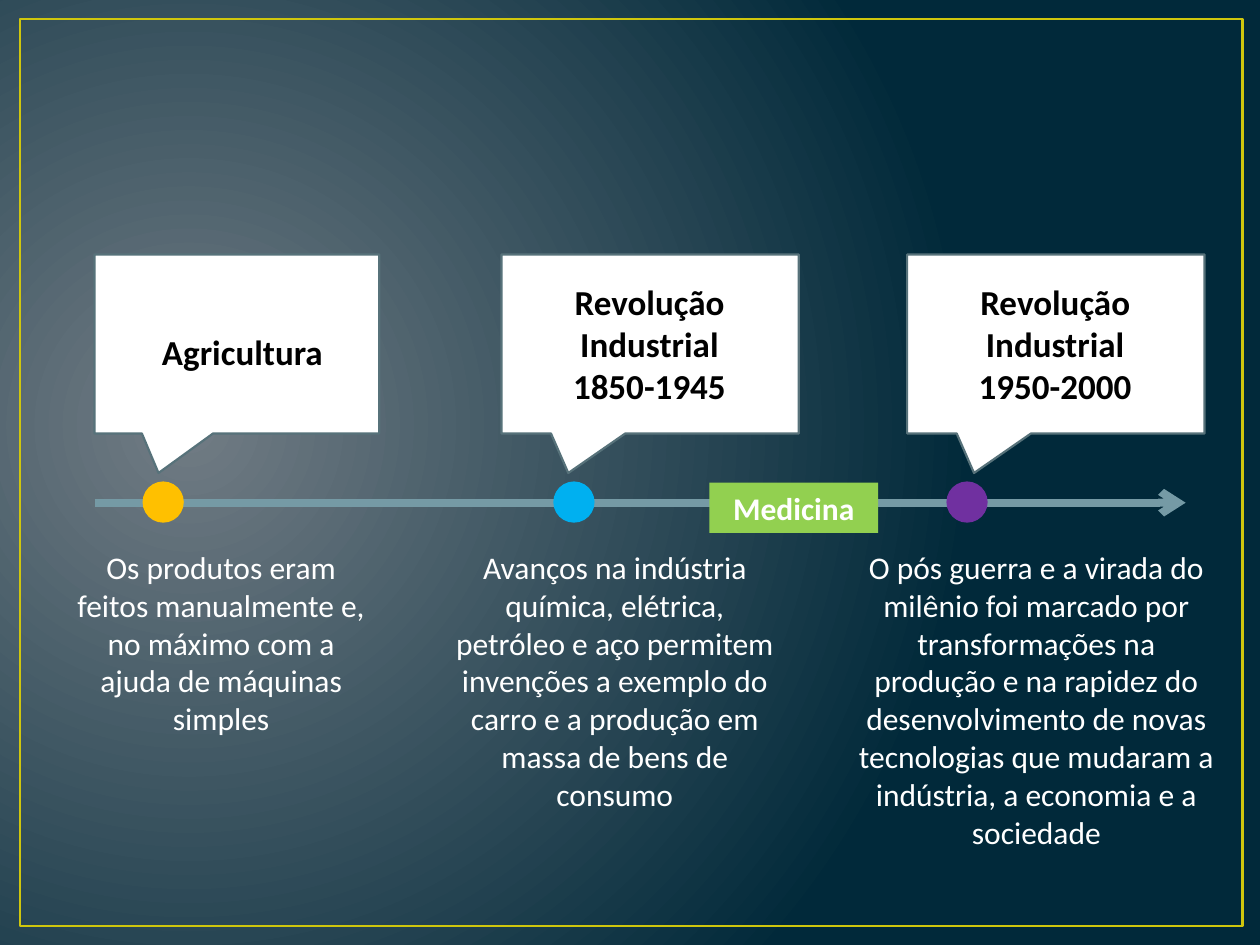
from lxml.etree import SubElement as Sub
from pptx import Presentation
from pptx.dml.color import RGBColor
from pptx.enum.shapes import MSO_CONNECTOR as Conn, MSO_SHAPE as Kind
from pptx.enum.text import MSO_ANCHOR as Anchor, MSO_AUTO_SIZE as Fit, PP_ALIGN as Align
from pptx.oxml.ns import qn
from pptx.util import Inches, Pt

COLS, ROWS = 10, 7.5


def color(code):
    return RGBColor.from_string(code)


class Deck:
    font = "Calibri"
    white, black = "FFFFFF", "000000"
    edge, axis, frame = "57727A", "759AA5", "CFC60D"

    def __init__(self):
        self.prs = Presentation()
        self.prs.slide_width, self.prs.slide_height = Inches(10), Inches(7.5)
        self.cell = self.prs.slide_width / COLS
        self.slide = self.prs.slides.add_slide(self.prs.slide_layouts[6])
        self.shapes = self.slide.shapes

    def grid(self, *cells):
        return [round(c * self.cell) for c in cells]

    def glow(self, inner, outer, focus):
        """Round background gradient centred on the focus rectangle."""
        fill = self.slide.background.fill
        fill.gradient()
        for stop, code, pos in zip(fill.gradient_stops, (inner, outer), (0, 1)):
            stop.color.rgb = color(code)
            stop.position = pos
        grad = self.slide.element.find(".//" + qn("a:gradFill"))
        grad.remove(grad.find(qn("a:lin")))
        way = Sub(grad, qn("a:path"), {"path": "circle"})
        Sub(way, qn("a:fillToRect"), {k: str(v * 1000) for k, v in zip("ltrb", focus)})

    def shape(self, kind, box, fill=None, line=None, width=1.25):
        item = self.shapes.add_shape(kind, *self.grid(*box))
        item.shadow.inherit = False
        if fill:
            item.fill.solid()
            item.fill.fore_color.rgb = color(fill)
        else:
            item.fill.background()
        if line:
            item.line.color.rgb = color(line)
            item.line.width = Pt(width)
        else:
            item.line.fill.background()
        return item

    def arrow(self, x, y, end):
        item = self.shapes.add_connector(Conn.STRAIGHT, *self.grid(x, y, end, y))
        item.line.color.rgb = color(self.axis)
        item.line.width = Pt(4.5)
        props = item.element.find(qn("p:spPr"))
        Sub(props.find(qn("a:ln")), qn("a:tailEnd"), {"type": "arrow"})
        Sub(props, qn("a:effectLst"))

    def dot(self, x, y, fill):
        self.shape(Kind.FLOWCHART_CONNECTOR, (x, y, 0.31, 0.31), fill, fill)

    def callout(self, x, y, w, h):
        item = self.shape(Kind.RECTANGULAR_CALLOUT, (x, y, w, h), self.white, self.edge)
        item.adjustments[0], item.adjustments[1] = -0.275, 0.721

    def label(self, item, lines, size, code, bold=False):
        frame = item.text_frame
        frame.word_wrap = True
        frame.auto_size = Fit.SHAPE_TO_FIT_TEXT
        frame.vertical_anchor = Anchor.TOP
        for i, line in enumerate(lines):
            para = frame.add_paragraph() if i else frame.paragraphs[0]
            para.alignment = Align.CENTER
            run = para.add_run()
            run.text = line
            font = run.font
            font.name, font.size, font.bold = self.font, Pt(size), bold
            font.color.rgb = color(code)

    def text(self, box, lines, size, code, bold=False):
        self.label(self.shapes.add_textbox(*self.grid(*box)), lines, size, code, bold)

    def tag(self, box, name, fill):
        self.label(self.shape(Kind.RECTANGLE, box, fill), [name], 18, self.white, True)


# Per era: callout (x, width), dot (x, colour), title (y, height, lines), body (x, width, height, text)
ERAS = [
    ((0.75, 2.26), (1.14, "FFC000"), (2.57, 0.44, ["Agricultura"]),
     (0.51, 2.49, 1.62, "Os produtos eram feitos manualmente e, no máximo com a "
      "ajuda de máquinas simples")),
    ((3.98, 2.36), (4.4, "00B0F0"), (2.18, 1.11, ["Revolução Industrial", "1850-1945"]),
     (3.5, 2.76, 2.22, "Avanços na indústria química, elétrica, petróleo e aço permitem "
      "invenções a exemplo do carro e a produção em massa de bens de consumo")),
    ((7.2, 2.36), (7.52, "7030A0"), (2.18, 1.11, ["Revolução Industrial", "1950-2000"]),
     (6.69, 3.07, 2.52, "O pós guerra e a virada do milênio foi marcado por transformações "
      "na produção e na rapidez do desenvolvimento de novas tecnologias que mudaram a "
      "indústria, a economia e a sociedade")),
]


def main():
    deck = Deck()

    # Background and frame
    deck.glow("717C84", "01293A", (15, 50, 85, 60))
    deck.shape(Kind.RECTANGLE, (0.16, 0.15, COLS - 0.3, ROWS - 0.3), line=deck.frame, width=1.5)

    # Time axis
    deck.arrow(0.75, 3.99, 9.41)

    # Eras
    for (x, w), (dot, fill), (top, high, title), (left, wide, tall, body) in ERAS:
        deck.dot(dot, 3.83, fill)
        deck.callout(x, 2.02, w, 1.42)
        deck.text((x + 0.31, top, 1.73, high), title, 20, deck.black, True)
        deck.text((left, 4.3, wide, tall), [body], 18, deck.white)

    # Tag on the axis
    deck.tag((5.63, 3.83, 1.34, 0.4), "Medicina", "92D050")

    deck.prs.save("out.pptx")


if __name__ == "__main__":
    main()
